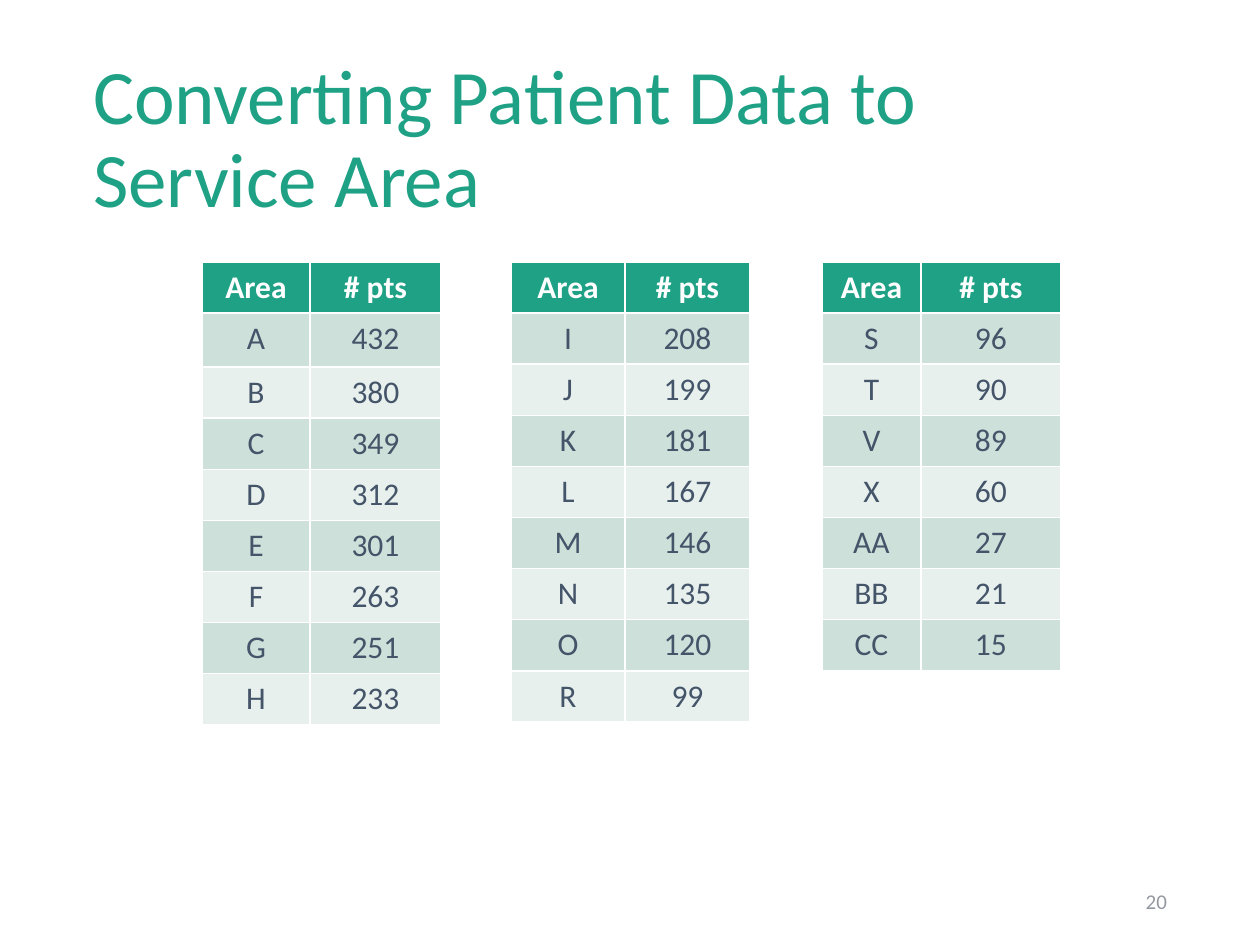
from pptx import Presentation
from pptx import util as u
from pptx.dml.color import RGBColor
from pptx.enum import text

COLORS = {"green": "1EA185", "white": "FFFFFF", "ink": "445469",
          "dark_band": "CDE0D9", "light_band": "E8F0ED", "number": "9499A1"}


def px(count):
    return u.Emu(round(count * 914400 / 126))


def add_run(paragraph, words, size, color, bold=False):
    run = paragraph.add_run()
    run.text = words
    run.font.name = "Calibri"
    run.font.size = u.Pt(size)
    run.font.bold = bold
    run.font.color.rgb = RGBColor.from_string(COLORS[color])


presentation = Presentation()
presentation.slide_width, presentation.slide_height = px(1260), px(945)
slide = presentation.slides.add_slide(presentation.slide_layouts[5])

# Title and slide number
title = slide.shapes.title
title.left, title.top, title.width, title.height = px(87), px(50), px(1086), px(183)
page_number = slide.shapes.add_textbox(px(890), px(876), px(283), px(50))
for shape in (title, page_number):
    frame = shape.text_frame
    frame.word_wrap = True
    frame.auto_size = text.MSO_AUTO_SIZE.NONE
    frame.vertical_anchor = text.MSO_ANCHOR.MIDDLE
    frame.margin_left = frame.margin_right = px(6)
    frame.margin_top = frame.margin_bottom = px(4)

paragraph = title.text_frame.paragraphs[0]
paragraph.alignment = text.PP_ALIGN.LEFT
paragraph.line_spacing = 0.9
add_run(paragraph, "Converting Patient Data to ", 44, "green")
paragraph.add_line_break()
add_run(paragraph, "Service Area", 44, "green")

paragraph = page_number.text_frame.paragraphs[0]
paragraph.alignment = text.PP_ALIGN.RIGHT
add_run(paragraph, "20", 12, "number")

# Patient tables: left edge, column widths, height of first data row, data
ROW_HEIGHT = 51
patient_tables = [
    (202, (108, 131), 54, [("A", 432), ("B", 380), ("C", 349), ("D", 312),
                           ("E", 301), ("F", 263), ("G", 251), ("H", 233)]),
    (511, (114, 125), 51, [("I", 208), ("J", 199), ("K", 181), ("L", 167),
                           ("M", 146), ("N", 135), ("O", 120), ("R", 99)]),
    (822, (99, 140), 51, [("S", 96), ("T", 90), ("V", 89), ("X", 60),
                          ("AA", 27), ("BB", 21), ("CC", 15)]),
]
for left, widths, first_height, areas in patient_tables:
    rows = [("Area", "# pts")] + areas
    # The default table style supplies the white cell borders
    table = slide.shapes.add_table(len(rows), 2, px(left), px(262), px(sum(widths)),
                                   px(ROW_HEIGHT * len(rows))).table
    for column, width in zip(table.columns, widths):
        column.width = px(width)
    for row_index, values in enumerate(rows):
        header = row_index == 0
        band = "green" if header else "dark_band" if row_index % 2 else "light_band"
        table.rows[row_index].height = px(first_height if row_index == 1 else ROW_HEIGHT)
        for column_index, value in enumerate(values):
            cell = table.cell(row_index, column_index)
            cell.fill.solid()
            cell.fill.fore_color.rgb = RGBColor.from_string(COLORS[band])
            paragraph = cell.text_frame.paragraphs[0]
            paragraph.alignment = text.PP_ALIGN.CENTER
            add_run(paragraph, str(value), 18, "white" if header else "ink", header)

presentation.save("out.pptx")
